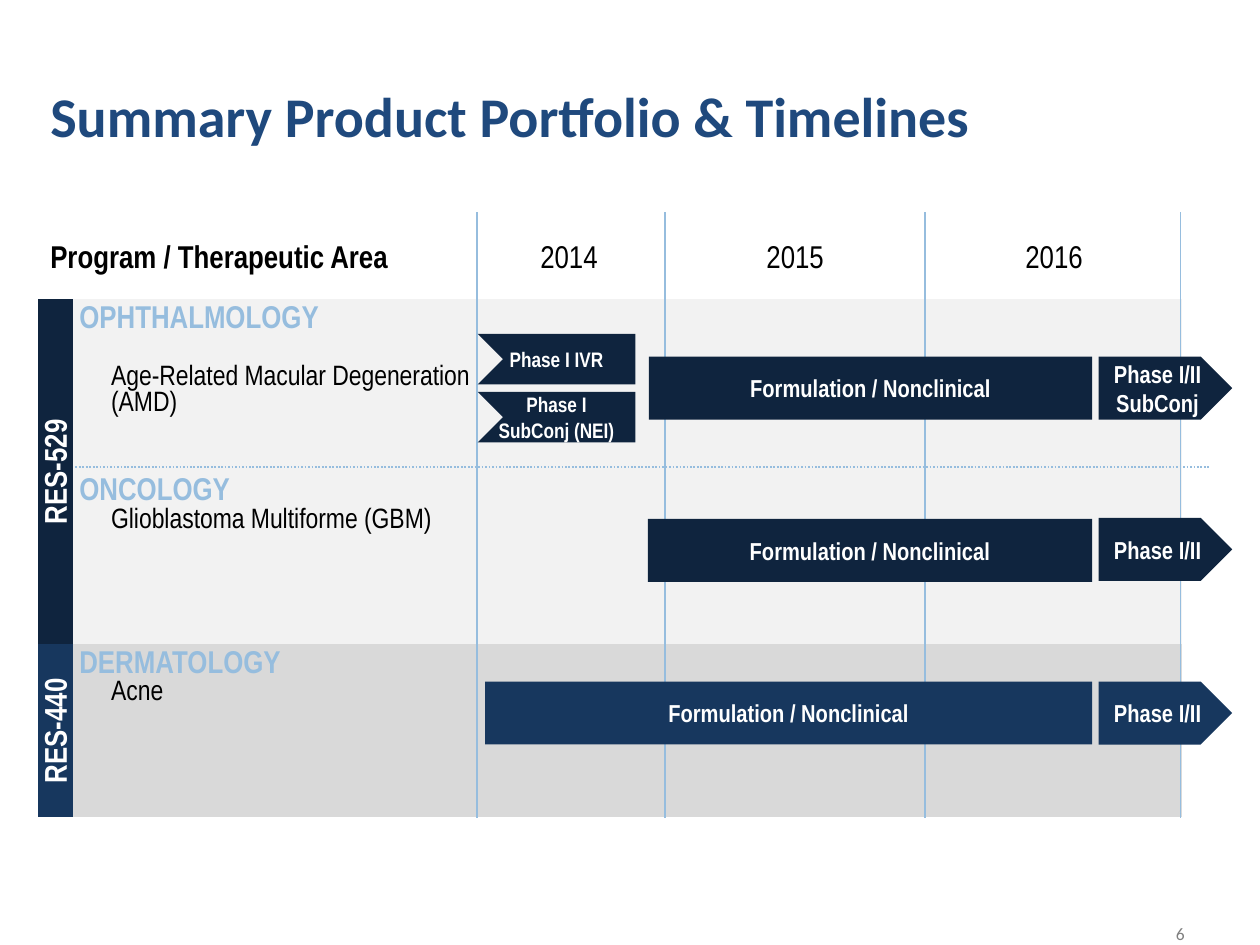
from lxml import etree
from pptx import Presentation
from pptx.dml.color import RGBColor
from pptx.enum.dml import MSO_LINE
from pptx.enum.shapes import MSO_CONNECTOR, MSO_SHAPE
from pptx.enum.text import MSO_ANCHOR, PP_ALIGN
from pptx.oxml.ns import qn
from pptx.util import Cm, Pt

NAVY = RGBColor(0x0F, 0x24, 0x3E)
BLUE = RGBColor(0x17, 0x37, 0x5E)
TITLE_BLUE = RGBColor(0x1F, 0x49, 0x7D)
SKY = RGBColor(0x96, 0xBD, 0xDE)
LIGHT = RGBColor(0xF2, 0xF2, 0xF2)
GREY = RGBColor(0xD9, 0xD9, 0xD9)
MID_GREY = RGBColor(0x7F, 0x7F, 0x7F)
BLACK = RGBColor(0, 0, 0)
WHITE = RGBColor(0xFF, 0xFF, 0xFF)

LEFT, CENTER, RIGHT = PP_ALIGN.LEFT, PP_ALIGN.CENTER, PP_ALIGN.RIGHT
MIDDLE = MSO_ANCHOR.MIDDLE
RECTANGLE, PENTAGON = MSO_SHAPE.RECTANGLE, MSO_SHAPE.PENTAGON
STRAIGHT = MSO_CONNECTOR.STRAIGHT
DOTTED = MSO_LINE.ROUND_DOT
NO_TABLE_STYLE = "{2D5ABB26-0587-4C30-8999-92F81FD0307C}"

COLUMNS = [0.71, 8.08, 3.84, 5.28, 5.16]
ROWS = [1.2, 3.48, 3.48, 3.48]
YEARS = ["2014", "2015", "2016"]
YEAR_LINES = [9.62, 13.41, 18.64, 23.8]
AREAS = [
    ("OPHTHALMOLOGY", "Age-Related Macular Degeneration (AMD)", 17, LIGHT),
    ("ONCOLOGY", "Glioblastoma Multiforme (GBM)", 0, LIGHT),
    ("DERMATOLOGY", "Acne", 0, GREY),
]
PRODUCTS = [(1, 2, "RES-529", NAVY), (3, 3, "RES-440", BLUE)]
PHASE_ONE = [(6.73, ["Phase I IVR"]), (7.9, ["Phase I", "SubConj (NEI)"])]
BAR_END = 22.02
# bar left, bar top, arrow top, arrow text, colour
PIPELINE = [
    (13.08, 7.19, 7.19, ["Phase I/II", "SubConj"], NAVY),
    (13.06, 10.46, 10.44, ["Phase I/II"], NAVY),
    (9.78, 13.74, 13.74, ["Phase I/II"], BLUE),
]


class SlideBuilder:
    def __init__(self, slide, font="Arial Narrow"):
        self.slide = slide
        self.font = font

    def add_text(self, para, text, size, color, bold=False, align=LEFT, font=None):
        para.alignment = align
        span = para.add_run()
        span.text = text
        span.font.name = font or self.font
        span.font.size = Pt(size)
        span.font.bold = bold
        span.font.color.rgb = color

    def title(self, text):
        box = self.slide.shapes.title
        box.left, box.top, box.width, box.height = Cm(0.76), Cm(1.04), Cm(23.37), Cm(2.57)
        box.text_frame.vertical_anchor = MIDDLE
        self.add_text(box.text_frame.paragraphs[0], text, 32, TITLE_BLUE, True, font="Calibri")

    def page_number(self, text):
        box = self.slide.shapes.add_textbox(Cm(18.21), Cm(18.52), Cm(5.92), Cm(0.58))
        frame = box.text_frame
        frame.word_wrap = True
        frame.vertical_anchor = MIDDLE
        self.add_text(frame.paragraphs[0], text, 10, MID_GREY, align=RIGHT, font="Calibri")

    def table(self, left, top, columns, rows):
        frame = self.slide.shapes.add_table(
            len(rows), len(columns), Cm(left), Cm(top), Cm(sum(columns)), Cm(sum(rows)))
        table = frame.table
        table.first_row = table.horz_banding = False
        table._tbl.tblPr.find(qn("a:tableStyleId")).text = NO_TABLE_STYLE
        for column, width in zip(table.columns, columns):
            column.width = Cm(width)
        for row, height in zip(table.rows, rows):
            row.height = Cm(height)
        return table

    def fill_cell(self, cell, color):
        cell.fill.solid()
        cell.fill.fore_color.rgb = color

    def area_cell(self, cell, heading, program, gap):
        cell.margin_left, cell.margin_right = Cm(0.13), 0
        self.add_text(cell.text_frame.paragraphs[0], heading, 18, SKY, True)
        para = cell.text_frame.add_paragraph()
        para._p.get_or_add_pPr().set("marL", str(Cm(0.64)))
        para.space_before = Pt(gap)
        self.add_text(para, program, 16, BLACK)

    def product_cell(self, cell, name, color):
        self.fill_cell(cell, color)
        cell.vertical_anchor = MIDDLE
        cell._tc.get_or_add_tcPr().set("vert", "vert270")
        self.add_text(cell.text_frame.paragraphs[0], name, 18, WHITE, True, CENTER)

    def line(self, x1, y1, x2, y2, dash=None):
        line = self.slide.shapes.add_connector(STRAIGHT, Cm(x1), Cm(y1), Cm(x2), Cm(y2))
        line.line.color.rgb = SKY
        line.line.width = Pt(1)
        if dash:
            line.line.dash_style = dash
        etree.SubElement(line._element.spPr, qn("a:effectLst"))

    def label(self, shape, lines, size, color):
        """Give a phase shape its flat fill and its centred text, one paragraph a line."""
        shape.shadow.inherit = False
        shape.fill.solid()
        shape.fill.fore_color.rgb = color
        shape.line.fill.background()
        frame = shape.text_frame
        frame.word_wrap = True
        frame.vertical_anchor = MIDDLE
        frame.margin_left = frame.margin_right = frame.margin_top = frame.margin_bottom = 0
        for index, text in enumerate(lines):
            para = frame.add_paragraph() if index else frame.paragraphs[0]
            self.add_text(para, text, size, WHITE, True, CENTER)

    def bar(self, kind, left, top, width, lines, color):
        shape = self.slide.shapes.add_shape(kind, Cm(left), Cm(top), Cm(width), Cm(1.27))
        self.label(shape, lines, 14, color)

    def notched_bar(self, left, top, lines, width=3.18, height=1.02):
        right, bottom, middle = left + width, top + height, top + height / 2
        outline = self.slide.shapes.build_freeform(Cm(left), Cm(top))
        corners = [(right, top), (right, bottom), (left, bottom), (left + height / 2, middle)]
        outline.add_line_segments([(Cm(x), Cm(y)) for x, y in corners], close=True)
        self.label(outline.convert_to_shape(), lines, 12, NAVY)


def add_portfolio_table(builder):
    table = builder.table(0.76, 4.83, COLUMNS, ROWS)
    table.cell(0, 0).merge(table.cell(0, 1))
    builder.add_text(table.cell(0, 0).text_frame.paragraphs[0],
                     "Program / Therapeutic Area", 18, BLACK, True)
    for column, year in enumerate(YEARS, 2):
        builder.add_text(table.cell(0, column).text_frame.paragraphs[0],
                         year, 18, BLACK, align=CENTER)
    for row, (heading, program, gap, color) in enumerate(AREAS, 1):
        for column in range(1, len(COLUMNS)):
            builder.fill_cell(table.cell(row, column), color)
        builder.area_cell(table.cell(row, 1), heading, program, gap)
    for first, last, name, color in PRODUCTS:
        if last > first:
            table.cell(first, 0).merge(table.cell(last, 0))
        builder.product_cell(table.cell(first, 0), name, color)


def main():
    deck = Presentation()
    deck.slide_width, deck.slide_height = Cm(25.4), Cm(19.05)
    builder = SlideBuilder(deck.slides.add_slide(deck.slide_layouts[5]))
    builder.title("Summary Product Portfolio & Timelines")
    add_portfolio_table(builder)
    for x in YEAR_LINES:
        builder.line(x, 4.28, x, 16.48)
    builder.line(1.52, 9.42, 24.38, 9.42, DOTTED)
    for top, lines in PHASE_ONE:
        builder.notched_bar(9.63, top, lines)
    for left, top, arrow_top, lines, color in PIPELINE:
        builder.bar(RECTANGLE, left, top, BAR_END - left, ["Formulation / Nonclinical"], color)
        builder.bar(PENTAGON, 22.15, arrow_top, 2.69, lines, color)
    builder.page_number("6")
    deck.save("out.pptx")


if __name__ == "__main__":
    main()
